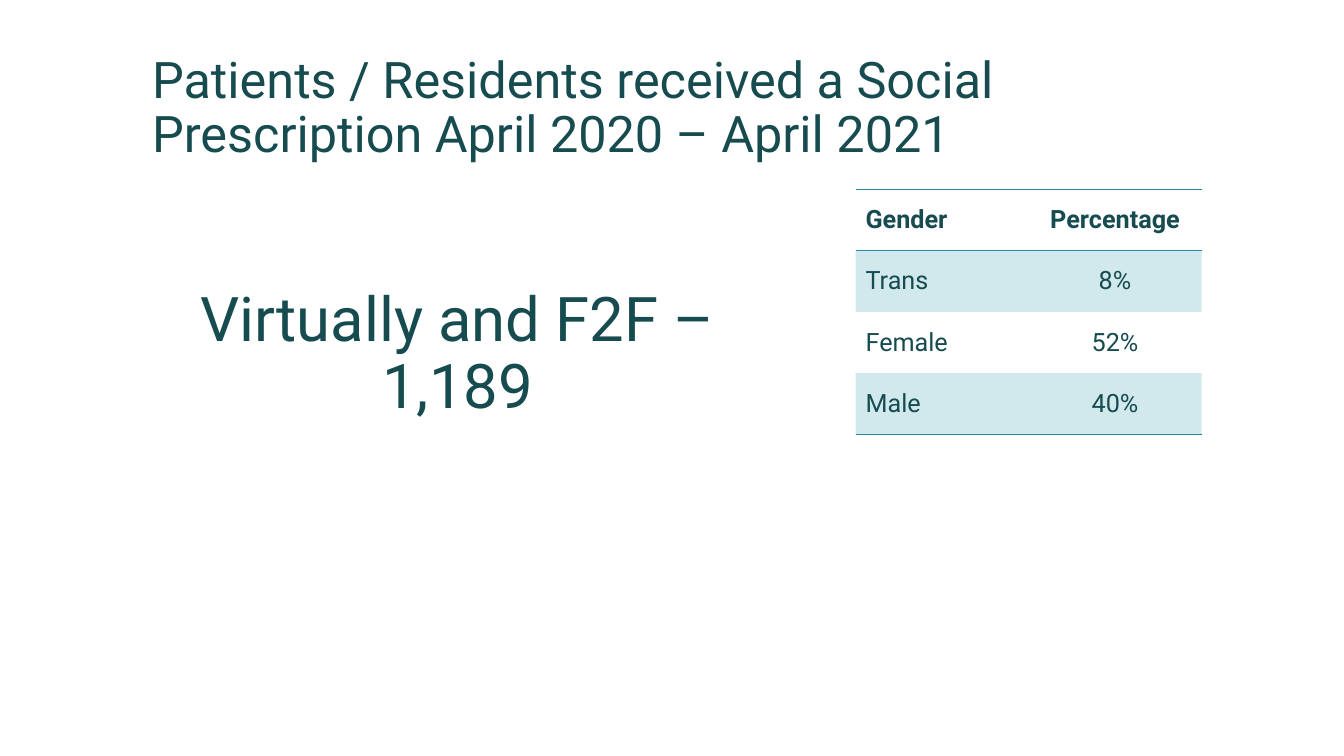
from dataclasses import dataclass

from lxml import etree
from pptx import Presentation
from pptx.dml.color import RGBColor
from pptx.enum.text import MSO_ANCHOR, PP_ALIGN
from pptx.oxml.ns import qn
from pptx.table import Table, _Cell
from pptx.text.text import TextFrame
from pptx.util import Cm, Pt

LEFT, CENTER = PP_ALIGN.LEFT, PP_ALIGN.CENTER
TOP, MIDDLE, BOTTOM = MSO_ANCHOR.TOP, MSO_ANCHOR.MIDDLE, MSO_ANCHOR.BOTTOM
FONT = "Roboto"
DARK, TEAL = "164B4F", "1B91A1"
NO_STYLE = "{2D5ABB26-0587-4C30-8999-92F81FD0307C}"
COL_WIDTH, ROW_HEIGHT = Cm(4.36), Cm(1.54)


@dataclass
class GenderRow:
    gender: str
    percentage: str


ROWS = [
    GenderRow("Gender", "Percentage"),
    GenderRow("Trans", "8%"),
    GenderRow("Female", "52%"),
    GenderRow("Male", "40%"),
]


def rgb(value: str) -> RGBColor:
    return RGBColor.from_string(value)


def write(tf: TextFrame, text: str, *, size: float, align: PP_ALIGN = LEFT,
          bold: bool = False, spacing: float = 1.0) -> None:
    tf.word_wrap = True
    p = tf.paragraphs[0]
    p.alignment = align
    p.line_spacing = spacing
    p.space_before = Pt(0)
    r = p.add_run()
    r.text = text
    r.font.name = FONT
    r.font.size = Pt(size)
    r.font.bold = bold
    r.font.color.rgb = rgb(DARK)


def add_border(cell: _Cell, side: str) -> None:
    """Draw a 1 pt line; side is lnT or lnB, top before bottom, before the fill."""
    line = etree.SubElement(cell._tc.get_or_add_tcPr(), qn(f"a:{side}"), w=str(Pt(1)))
    fill = etree.SubElement(line, qn("a:solidFill"))
    etree.SubElement(fill, qn("a:srgbClr"), val=TEAL)


def fill_cell(cell: _Cell, tinted: bool) -> None:
    if not tinted:
        cell.fill.background()
        return
    cell.fill.solid()
    cell.fill.fore_color.rgb = rgb(TEAL)
    color = cell._tc.tcPr.find(f"{qn('a:solidFill')}/{qn('a:srgbClr')}")
    etree.SubElement(color, qn("a:alpha"), val="20000")


def fill_table(table: Table) -> None:
    table.horz_banding = False
    table._tbl.tblPr.find(qn("a:tableStyleId")).text = NO_STYLE
    last = len(ROWS) - 1
    for i, row in enumerate(ROWS):
        for j, text in enumerate((row.gender, row.percentage)):
            cell = table.cell(i, j)
            cell.vertical_anchor = MIDDLE
            write(cell.text_frame, text, size=18, bold=i == 0,
                  align=CENTER if j else LEFT)
            if i == 0:
                add_border(cell, "lnT")
            if i in (0, last):
                add_border(cell, "lnB")
            fill_cell(cell, tinted=i % 2 == 1)


def main() -> None:
    prs = Presentation()
    prs.slide_width, prs.slide_height = Cm(33.87), Cm(19.05)
    s = prs.slides.add_slide(prs.slide_layouts[5])

    title = s.shapes.title
    title.left, title.top = Cm(3.58), Cm(1.07)
    title.width, title.height = Cm(26.67), Cm(3.18)
    title.text_frame.vertical_anchor = BOTTOM
    write(title.text_frame,
          "Patients / Residents received a Social Prescription April 2020 – April 2021",
          size=36, spacing=0.9)

    total = s.shapes.add_textbox(Cm(3.94), Cm(7.14), Cm(15.19), Cm(6.15))
    total.text_frame.vertical_anchor = TOP
    write(total.text_frame, "Virtually and F2F – 1,189", size=44,
          align=CENTER, spacing=0.9)

    frame = s.shapes.add_table(len(ROWS), 2, Cm(21.56), Cm(4.78),
                               2 * COL_WIDTH, len(ROWS) * ROW_HEIGHT)
    fill_table(frame.table)
    prs.save("out.pptx")


if __name__ == "__main__":
    main()
